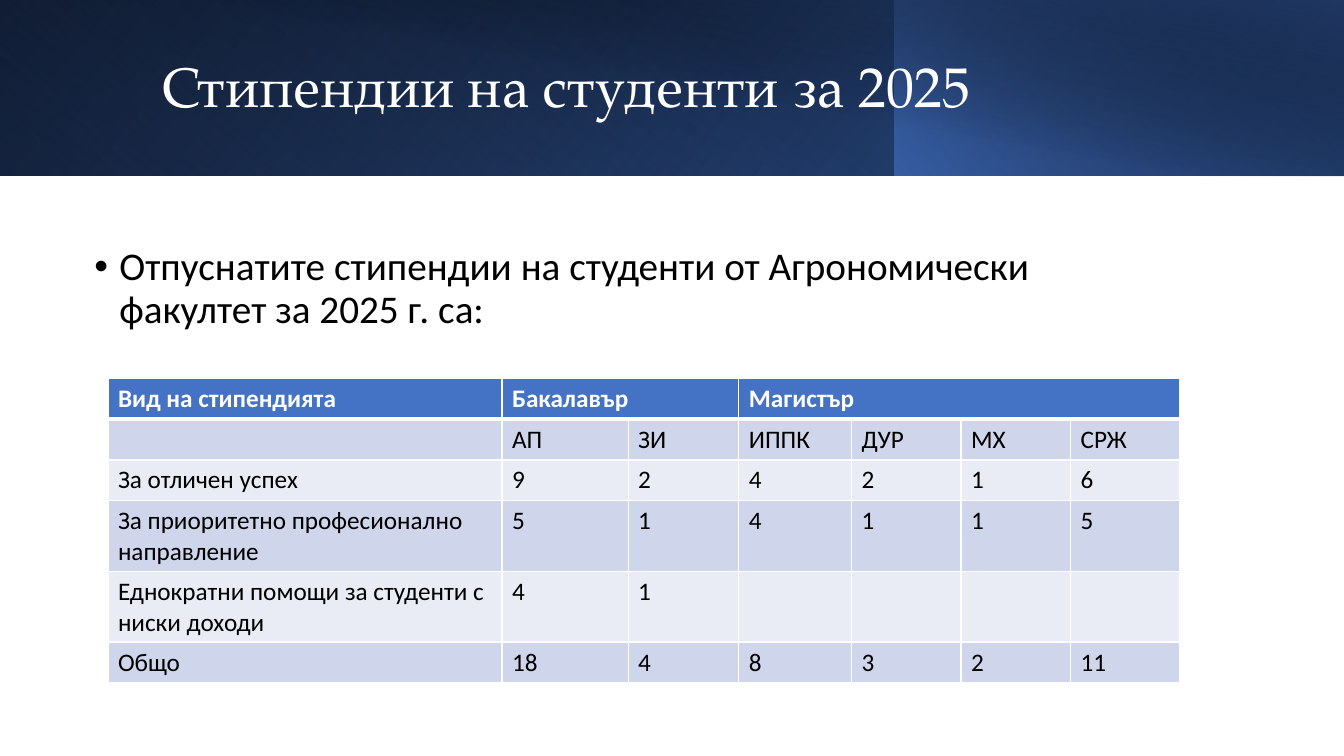
from dataclasses import dataclass

from lxml import etree
from pptx import Presentation
from pptx import util as u
from pptx.dml.color import RGBColor
from pptx.enum import shapes, text
from pptx.oxml import ns

Cm, Pt = u.Cm, u.Pt


@dataclass(frozen=True)
class Theme:
    white: str = "FFFFFF"
    black: str = "000000"
    blue: str = "4472C4"
    deep_blue: str = "2F5597"
    navy: str = "203864"
    row_dark: str = "CFD5EA"
    row_light: str = "E9EBF5"
    title_font: str = "TeX Gyre Pagella"
    body_font: str = "Calibri"
    title_size: int = 40
    body_size: int = 28
    table_size: int = 18


T = Theme()
SLIDE_W, BAND_H = 33.87, 4.42
SPLIT = 22.54

COLUMN_WIDTHS = [9.93, 3.18, 2.79, 2.84, 2.76, 2.76, 2.76]
ROW_HEIGHT = 1.03
ROWS = [
    ["Вид на стипендията", "Бакалавър", "", "Магистър", "", "", ""],
    ["", "АП", "ЗИ", "ИППК", "ДУР", "МХ", "СРЖ"],
    ["За отличен успех", "9", "2", "4", "2", "1", "6"],
    ["За приоритетно професионално направление", "5", "1", "4", "1", "1", "5"],
    ["Еднократни помощи за студенти с ниски доходи", "4", "1", "", "", "", ""],
    ["Общо", "18", "4", "8", "3", "2", "11"],
]
HEADER_SPANS = [(1, 2), (3, 6)]


def add_xml(parent, tag, **attrs):
    return etree.SubElement(parent, ns.qn(tag), attrs)


def add_solid(parent, color):
    return add_xml(add_xml(parent, "a:solidFill"), "a:srgbClr", val=color)


def write(p, content, *, size, color, font=T.body_font, bold=False, spacing=None):
    r = p.add_run()
    r.text = content
    r.font.size, r.font.name, r.font.bold = Pt(size), font, bold
    r.font.color.rgb = RGBColor.from_string(color)
    if spacing is not None:
        r.font._element.set("spc", str(spacing))
    return r


def add_band(s, left, width, angle, stops, *, height=BAND_H, rotation=0, flip=True):
    """Rectangle with a gradient; each stop is (position, colour, opacity) in percent."""
    sp = s.shapes.add_shape(shapes.MSO_SHAPE.RECTANGLE,
                            Cm(left), 0, Cm(width), Cm(height))
    sp.shadow.inherit = False
    sp.line.fill.background()
    sp.rotation = rotation
    props = sp.element.spPr
    if flip:
        props.find(ns.qn("a:xfrm")).set("flipH", "1")
    grad = etree.Element(ns.qn("a:gradFill"), rotWithShape="1")
    stop_list = add_xml(grad, "a:gsLst")
    for position, color, opacity in stops:
        stop = add_xml(stop_list, "a:gs", pos=str(position * 1000))
        clr = add_xml(stop, "a:srgbClr", val=color)
        if opacity < 100:
            add_xml(clr, "a:alpha", val=str(opacity * 1000))
    add_xml(grad, "a:lin", ang=str(angle * 60000), scaled="0")
    props.find(ns.qn("a:prstGeom")).addnext(grad)


def add_title(s, content):
    title = s.shapes.title
    # Bring the title in front of the bands
    title.element.getparent().append(title.element)
    title.left, title.top = Cm(3.81), Cm(0.81)
    title.width, title.height = Cm(27.48), Cm(2.87)
    tf = title.text_frame
    tf.auto_size = text.MSO_AUTO_SIZE.NONE
    tf.vertical_anchor = text.MSO_ANCHOR.MIDDLE
    p = tf.paragraphs[0]
    p.alignment, p.line_spacing = text.PP_ALIGN.LEFT, 0.9
    write(p, content, size=T.title_size, color=T.white, font=T.title_font, spacing=-10)


def add_bullet_text(s, content):
    tf = s.shapes.add_textbox(Cm(2.13), Cm(6.1), Cm(25.76), Cm(3.07)).text_frame
    tf.word_wrap = True
    p = tf.paragraphs[0]
    p.line_spacing = 0.9
    props = p._p.get_or_add_pPr()
    props.set("marL", str(Cm(0.63)))
    props.set("indent", str(-Cm(0.63)))
    add_xml(props, "a:buFont", typeface="Arial")
    add_xml(props, "a:buChar", char="•")
    write(p, content, size=T.body_size, color=T.black)


def set_borders(cell, **widths):
    props = cell._tc.get_or_add_tcPr()
    for side in "LRTB":
        line = add_xml(props, f"a:ln{side}", w=str(Pt(widths.get(side, 1))))
        add_solid(line, T.white)


def add_grants_table(s):
    table = s.shapes.add_table(len(ROWS), len(COLUMN_WIDTHS), Cm(2.72), Cm(9.53),
                               Cm(sum(COLUMN_WIDTHS)), Cm(ROW_HEIGHT * len(ROWS))).table
    for column, width in zip(table.columns, COLUMN_WIDTHS):
        column.width = Cm(width)
    for first, last in HEADER_SPANS:
        table.cell(0, first).merge(table.cell(0, last))
    for i, row in enumerate(ROWS):
        table.rows[i].height = Cm(ROW_HEIGHT)
        header = i == 0
        fill = T.blue if header else (T.row_dark if i % 2 else T.row_light)
        for j, content in enumerate(row):
            cell = table.cell(i, j)
            set_borders(cell, T=3 if i == 1 else 1, B=3 if header else 1)
            cell.fill.solid()
            cell.fill.fore_color.rgb = RGBColor.from_string(fill)
            p = cell.text_frame.paragraphs[0]
            if content:
                write(p, content, size=T.table_size, bold=header,
                      color=T.white if header else T.black)
            else:
                p.font.size = Pt(T.table_size)


def main():
    prs = Presentation()
    prs.slide_width, prs.slide_height = Cm(SLIDE_W), Cm(19.05)
    s = prs.slides.add_slide(prs.slide_layouts[5])

    # Layered header bands
    add_band(s, 0, SLIDE_W, 140, [(0, T.black, 100), (100, T.deep_blue, 100)])
    add_band(s, 0, SPLIT, 230, [(20, T.blue, 0), (100, T.navy, 55)], rotation=180)
    add_band(s, SPLIT, SLIDE_W - SPLIT, 220, [(0, T.blue, 66), (100, T.black, 30)])
    add_band(s, 1.27, SLIDE_W - 1.27, 280, [(50, T.black, 0), (99, T.navy, 52)],
             height=4.45, flip=False)

    # Content
    add_title(s, "Стипендии на студенти за 2025")
    add_bullet_text(s, "Отпуснатите стипендии на студенти от Агрономически "
                       "факултет за 2025 г. са:")
    add_grants_table(s)
    prs.save("out.pptx")


if __name__ == "__main__":
    main()
